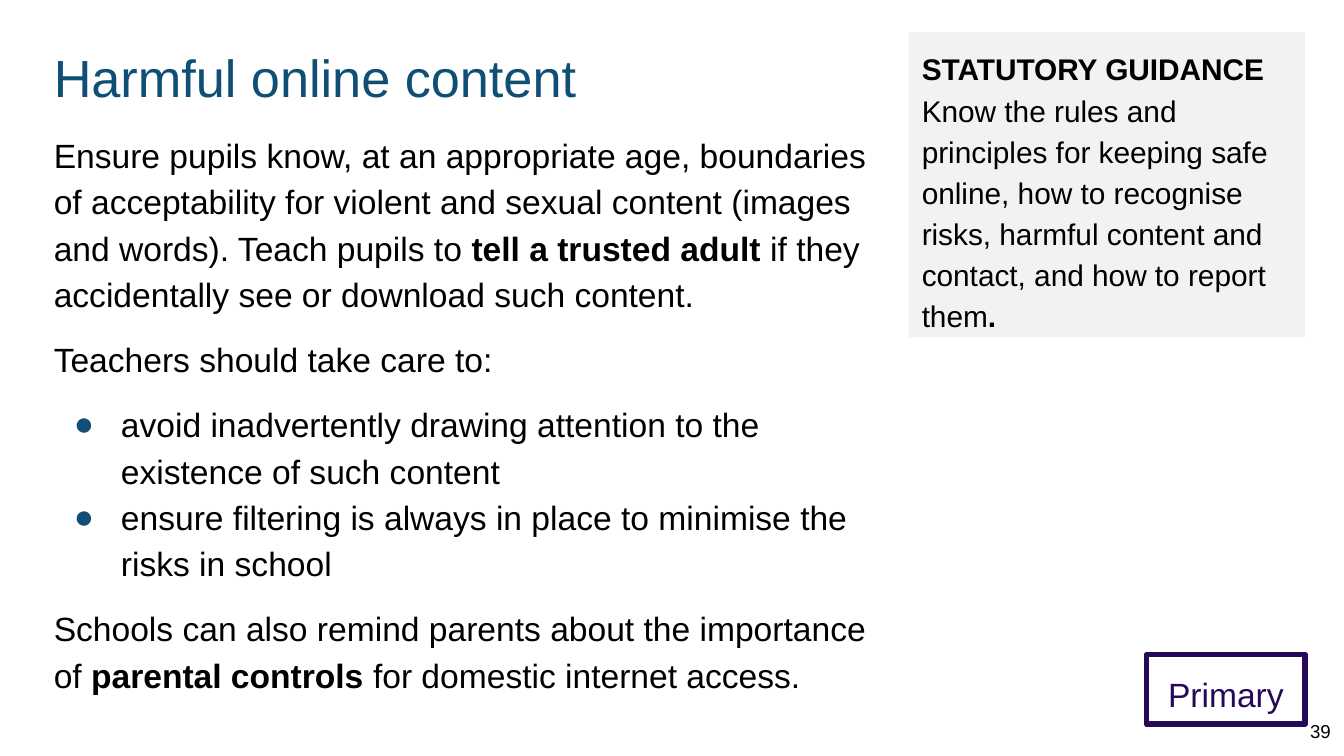
"""Build the slide on harmful online content."""
from dataclasses import dataclass

from lxml.etree import SubElement
from pptx import Presentation
from pptx.dml.color import RGBColor
from pptx.enum.shapes import MSO_SHAPE
from pptx.enum.text import MSO_ANCHOR, MSO_AUTO_SIZE, PP_ALIGN
from pptx.oxml.ns import qn
from pptx.util import Pt

COLOURS = {"heading": "104F75", "text": "000000", "label": "260859", "panel": "F3F2F1"}
FONT = "Arial"
INSET = 7.2
BOLD_MARK = "**"


@dataclass(frozen=True)
class Area:
    left: float
    top: float
    width: float
    height: float


@dataclass(frozen=True)
class Entry:
    text: str
    before: float = 0
    bullet: bool = False


TITLE_AREA = Area(21.6, 17.3, 461.5, 45.4)
BODY_AREA = Area(21.6, 61.9, 461.5, 288.7)
GUIDANCE_AREA = Area(486.7, 17.3, 212.4, 163.4)
LABEL_AREA = Area(614.2, 350.6, 85, 37.4)
NUMBER_AREA = Area(691.9, 378.7, 28.1, 26.3)

BODY = [
    Entry("Ensure pupils know, at an appropriate age, boundaries of acceptability for "
          "violent and sexual content (images and words). Teach pupils to **tell a trusted "
          "adult** if they accidentally see or download such content."),
    Entry("Teachers should take care to:", before=10),
    Entry("avoid inadvertently drawing attention to the existence of such content",
          before=10, bullet=True),
    Entry("ensure filtering is always in place to minimise the risks in school", bullet=True),
    Entry("Schools can also remind parents about the importance of **parental controls** "
          "for domestic internet access.", before=10),
]
GUIDANCE = [
    Entry("**STATUTORY GUIDANCE**\nKnow the rules and principles for keeping safe online, "
          "how to recognise risks, harmful content and contact, and how to report them**.**"),
]


def colour(name: str) -> RGBColor:
    """Return a named colour."""
    return RGBColor.from_string(COLOURS[name])


def place(box, area: Area) -> None:
    """Move and size a box."""
    box.left, box.top = Pt(area.left), Pt(area.top)
    box.width, box.height = Pt(area.width), Pt(area.height)


def set_bullet(paragraph, bullet: bool) -> None:
    """Give a paragraph a coloured bullet, or none."""
    properties = paragraph._p.get_or_add_pPr()
    properties.set("marL", str(Pt(36 if bullet else 0)))
    properties.set("indent", str(Pt(-25.2 if bullet else 0)))
    if bullet:
        bullet_colour = SubElement(properties, qn("a:buClr"))
        SubElement(bullet_colour, qn("a:srgbClr"), val=COLOURS["heading"])
        SubElement(properties, qn("a:buFont"), typeface=FONT)
        SubElement(properties, qn("a:buChar"), char="●")
    else:
        SubElement(properties, qn("a:buNone"))


def write(box, entries: list[Entry], *, size: float = 18, tint: str = "text",
          align=PP_ALIGN.LEFT, anchor=MSO_ANCHOR.TOP, spacing: float = 1.15) -> None:
    """Fill a box with formatted paragraphs."""
    frame = box.text_frame
    frame.word_wrap = True
    frame.auto_size = MSO_AUTO_SIZE.NONE
    frame.vertical_anchor = anchor
    frame.margin_left = frame.margin_right = Pt(INSET)
    frame.margin_top = frame.margin_bottom = Pt(INSET)
    for index, entry in enumerate(entries):
        paragraph = frame.add_paragraph() if index else frame.paragraphs[0]
        paragraph.alignment = align
        paragraph.line_spacing = spacing
        paragraph.space_before, paragraph.space_after = Pt(entry.before), Pt(0)
        set_bullet(paragraph, entry.bullet)
        for part, content in enumerate(entry.text.split(BOLD_MARK)):
            for row, line in enumerate(content.split("\n")):
                if row:
                    paragraph.add_line_break()
                if line:
                    span = paragraph.add_run()
                    span.text = line
                    span.font.name, span.font.size = FONT, Pt(size)
                    span.font.bold = part % 2 == 1
                    span.font.color.rgb = colour(tint)


def add_panel(page, area: Area, *, fill: str = "", line: str = ""):
    """Add a rectangle with an optional fill and outline."""
    box = page.shapes.add_shape(MSO_SHAPE.RECTANGLE, 0, 0, 0, 0)
    place(box, area)
    box.shadow.inherit = False
    if fill:
        box.fill.solid()
        box.fill.fore_color.rgb = colour(fill)
    else:
        box.fill.background()
    if line:
        box.line.color.rgb = colour(line)
        box.line.width = Pt(3)
    else:
        box.line.fill.background()
    return box


def main() -> None:
    """Build and save the deck."""
    deck = Presentation()
    deck.slide_width, deck.slide_height = Pt(720), Pt(405)
    page = deck.slides.add_slide(deck.slide_layouts[1])

    title, body = page.shapes.title, page.placeholders[1]
    place(title, TITLE_AREA)
    write(title, [Entry("Harmful online content")], size=28, tint="heading", spacing=1)
    place(body, BODY_AREA)
    write(body, BODY)

    label = add_panel(page, LABEL_AREA, line="label")
    write(label, [Entry("Primary")], tint="label", align=PP_ALIGN.CENTER)

    number = page.shapes.add_textbox(0, 0, 0, 0)
    place(number, NUMBER_AREA)
    write(number, [Entry("39")], size=10, align=PP_ALIGN.RIGHT,
          anchor=MSO_ANCHOR.MIDDLE, spacing=1)

    guidance = add_panel(page, GUIDANCE_AREA, fill="panel")
    write(guidance, GUIDANCE, size=16)

    deck.save("out.pptx")


if __name__ == "__main__":
    main()
